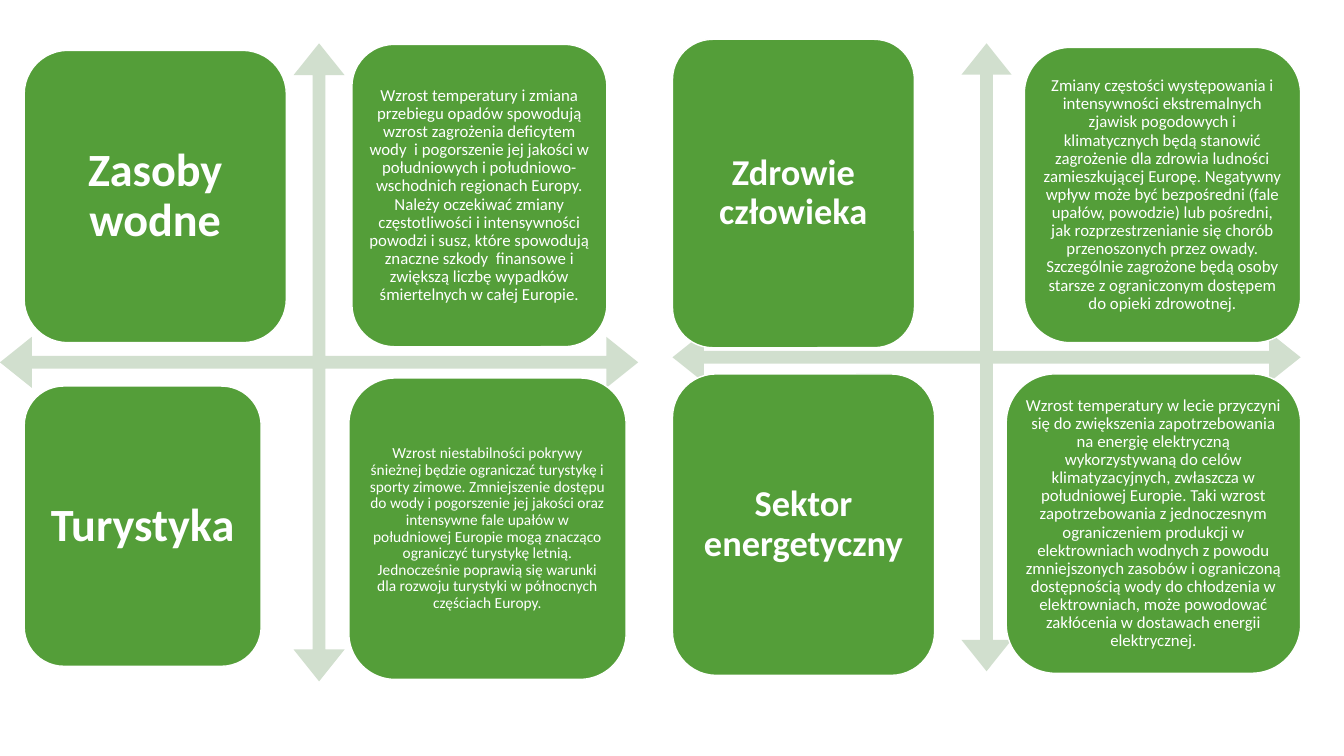
from pptx import Presentation
from pptx.dml.color import RGBColor
from pptx.enum.shapes import MSO_SHAPE
from pptx.enum.text import MSO_ANCHOR, PP_ALIGN
from pptx.util import Emu, Pt

PX = 9144  # 100 px to the inch
SLIDE_SIZE = (1333, 750)
FONT = "Calibri"
COLORS = {"card": "549E39", "arrow": "D1DFCE", "white": "FFFFFF"}
ARROW_ADJUSTMENTS = (0.02, 0.04, 0.05)
BODY_INSET = 5

# Each matrix: arrow (left, top, side), title size and inset, then its rows.
# Each row: title, title frame, body text, body size, body frame.
MATRICES = [
    {
        "arrow": (0, 43, 633), "title_size": 33, "title_inset": 14,
        "rows": [
            ("Zasoby wodne", (24, 50, 260, 290),
             "Wzrost temperatury i zmiana przebiegu opadów spowodują wzrost "
             "zagrożenia deficytem wody  i pogorszenie jej jakości w "
             "południowych i południowo-wschodnich regionach Europy. Należy "
             "oczekiwać zmiany częstotliwości i intensywności powodzi i susz, "
             "które spowodują znaczne szkody  finansowe i zwiększą liczbę "
             "wypadków śmiertelnych w całej Europie.",
             12, (349, 44, 253, 300)),
            ("Turystyka", (24, 383, 235, 278),
             "Wzrost niestabilności pokrywy śnieżnej będzie ograniczać "
             "turystykę i sporty zimowe. Zmniejszenie dostępu do wody i "
             "pogorszenie jej jakości oraz intensywne fale upałów w "
             "południowej Europie mogą znacząco ograniczyć turystykę letnią. "
             "Jednocześnie poprawią się warunki dla rozwoju turystyki w "
             "północnych częściach Europy.",
             11, (346, 375, 275, 299)),
        ],
    },
    {
        "arrow": (667, 43, 623), "title_size": 26, "title_inset": 11,
        "rows": [
            ("Zdrowie człowieka", (667, 39, 240, 306),
             "Zmiany częstości występowania i intensywności ekstremalnych "
             "zjawisk pogodowych i klimatycznych będą stanowić zagrożenie dla "
             "zdrowia ludności zamieszkującej Europę. Negatywny wpływ może być "
             "bezpośredni (fale upałów, powodzie) lub pośredni, jak "
             "rozprzestrzenianie się chorób przenoszonych przez owady. "
             "Szczególnie zagrożone będą osoby starsze z ograniczonym dostępem "
             "do opieki zdrowotnej.",
             12, (1016, 47, 274, 293)),
            ("Sektor energetyczny", (667, 371, 260, 299),
             "Wzrost temperatury w lecie przyczyni się do zwiększenia "
             "zapotrzebowania na energię elektryczną wykorzystywaną do celów "
             "klimatyzacyjnych, zwłaszcza w południowej Europie. Taki wzrost "
             "zapotrzebowania z jednoczesnym ograniczeniem produkcji w "
             "elektrowniach wodnych z powodu zmniejszonych zasobów i "
             "ograniczoną dostępnością wody do chłodzenia w elektrowniach, może "
             "powodować zakłócenia w dostawach energii elektrycznej.",
             12, (998, 371, 292, 297)),
        ],
    },
]


def px(value):
    return Emu(value * PX)


def color(name):
    return RGBColor.from_string(COLORS[name])


def add_filled_shape(group, kind, frame, fill):
    shape = group.shapes.add_shape(kind, *map(px, frame))
    shape.shadow.inherit = False
    shape.fill.solid()
    shape.fill.fore_color.rgb = color(fill)
    return shape


def write_text(shape, text, *, size, inset, bold=False):
    box = shape.text_frame
    box.word_wrap = True
    box.vertical_anchor = MSO_ANCHOR.MIDDLE
    box.margin_left = box.margin_right = px(inset)
    box.margin_top = box.margin_bottom = px(inset)
    para = box.paragraphs[0]
    para.alignment = PP_ALIGN.CENTER
    para.line_spacing = 0.9
    span = para.add_run()
    span.text = text
    span.font.name = FONT
    span.font.size = Pt(size)
    span.font.bold = bold
    span.font.color.rgb = color("white")


def add_card(group, frame, text, **text_format):
    card = add_filled_shape(group, MSO_SHAPE.ROUNDED_RECTANGLE, frame, "card")
    card.line.color.rgb = color("white")
    card.line.width = Pt(1)
    write_text(card, text, **text_format)


def add_cross_arrow(group, left, top, side):
    arrow = add_filled_shape(group, MSO_SHAPE.QUAD_ARROW,
                             (left, top, side, side), "arrow")
    arrow.line.fill.background()
    for index, value in enumerate(ARROW_ADJUSTMENTS):
        arrow.adjustments[index] = value


def main():
    deck = Presentation()
    deck.slide_width, deck.slide_height = map(px, SLIDE_SIZE)
    page = deck.slides.add_slide(deck.slide_layouts[6])
    for matrix in MATRICES:
        group = page.shapes.add_group_shape()
        add_cross_arrow(group, *matrix["arrow"])
        for title, title_frame, body, body_size, body_frame in matrix["rows"]:
            add_card(group, title_frame, title, size=matrix["title_size"],
                     inset=matrix["title_inset"], bold=True)
            add_card(group, body_frame, body, size=body_size, inset=BODY_INSET)
    deck.save("out.pptx")


if __name__ == "__main__":
    main()
